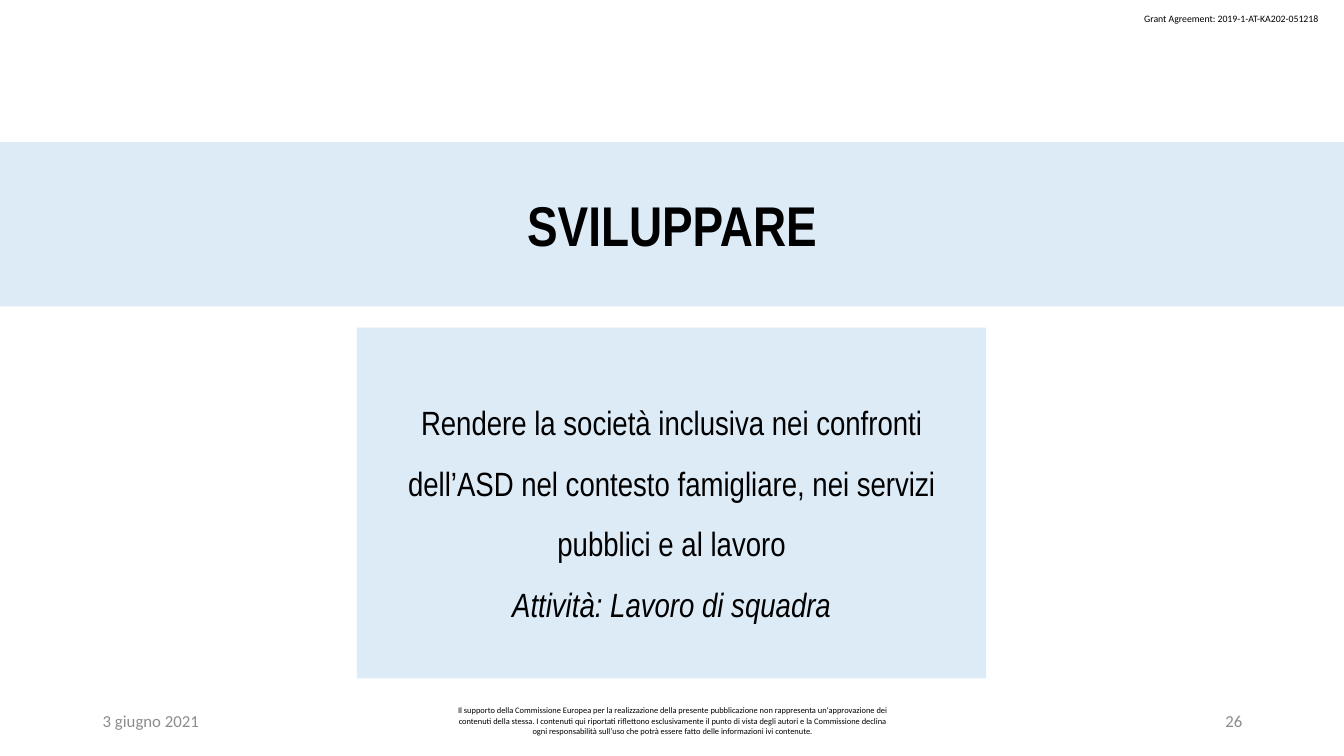
from pptx import Presentation, util as u
from pptx.dml.color import RGBColor
from pptx.enum import shapes, text

THEME = {
    "pale": RGBColor.from_string("DDEBF7"),
    "black": RGBColor.from_string("000000"),
    "gray": RGBColor.from_string("8C8C8C"),
    "head": "Arial Narrow", "body": "Calibri",
    "title": 40, "main": 24, "foot": 12, "grant": 7, "note": 6,
}
LEFT, MID, RIGHT = text.PP_ALIGN.LEFT, text.PP_ALIGN.CENTER, text.PP_ALIGN.RIGHT

deck = Presentation()
deck.slide_width, deck.slide_height = u.Inches(13.33), u.Inches(7.5)
slide = deck.slides.add_slide(deck.slide_layouts[5])


def place(shape, left, top, width, height):
    box = {"left": left, "top": top, "width": width, "height": height}
    for key, val in box.items():
        setattr(shape, key, u.Inches(val))


def write(shape, lines, size, face, color, align, space=None, **form):
    """Fill the shape with paragraphs that share one format."""
    frame = shape.text_frame
    frame.text = "\n".join(lines)
    frame.word_wrap = True
    frame.auto_size = text.MSO_AUTO_SIZE.NONE
    frame.vertical_anchor = text.MSO_ANCHOR.MIDDLE
    form |= {"size": u.Pt(THEME[size]), "name": THEME[face]}
    for para in frame.paragraphs:
        para.alignment = align
        if space:
            para.line_spacing = space
        para.font.color.rgb = THEME[color]
        for key, val in form.items():
            setattr(para.font, key, val)
    return frame


# Title band and main panel
band = slide.shapes.title
panel = slide.shapes.add_shape(shapes.MSO_SHAPE.RECTANGLE, 0, 0, 0, 0)
panel.shadow.inherit = False
place(band, 0, 1.41, 13.33, 1.63)
place(panel, 3.54, 3.25, 6.24, 3.48)
write(band, ["SVILUPPARE"], "title", "head", "black", MID, bold=True)
main = write(panel, [
    "Rendere la società inclusiva nei confronti dell’ASD nel contesto "
    "famigliare, nei servizi pubblici e al lavoro",
    "Attività: Lavoro di squadra",
], "main", "head", "black", MID, 1.5)
main.paragraphs[1].font.italic = True

inset = {"margin_left": 0.13, "margin_right": 0.13,
         "margin_top": 0.07, "margin_bottom": 0.07}
for block in (band, panel):
    block.fill.solid()
    block.fill.fore_color.rgb = THEME["pale"]
    block.line.fill.background()
    for key, val in inset.items():
        setattr(block.text_frame, key, u.Inches(val))

# Footer row
note = (
    "Il supporto della Commissione Europea per la realizzazione della presente "
    "pubblicazione non rappresenta un'approvazione dei contenuti della stessa. "
    "I contenuti qui riportati riflettono esclusivamente il punto di vista degli "
    "autori e la Commissione declina ogni responsabilità sull’uso che potrà "
    "essere fatto delle informazioni ivi contenute."
)
for left, width, words, size, color, align in (
    (0.92, 3, "3 giugno 2021", "foot", "gray", LEFT),
    (4.42, 4.5, note, "note", "black", MID),
    (9.42, 3, "26", "foot", "gray", RIGHT),
):
    cell = slide.shapes.add_textbox(0, 0, 0, 0)
    place(cell, left, 6.95, width, 0.4)
    write(cell, [words], size, "body", color, align)

# Grant line in the top corner
grant = slide.shapes.add_textbox(0, 0, 0, 0)
place(grant, 11.25, 0.08, 1.97, 0.22)
label = write(grant, ["Grant Agreement: 2019-1-AT-KA202-051218"],
              "grant", "body", "black", LEFT)
label.word_wrap = False
label.auto_size = text.MSO_AUTO_SIZE.SHAPE_TO_FIT_TEXT
label.vertical_anchor = text.MSO_ANCHOR.TOP

deck.save("out.pptx")
